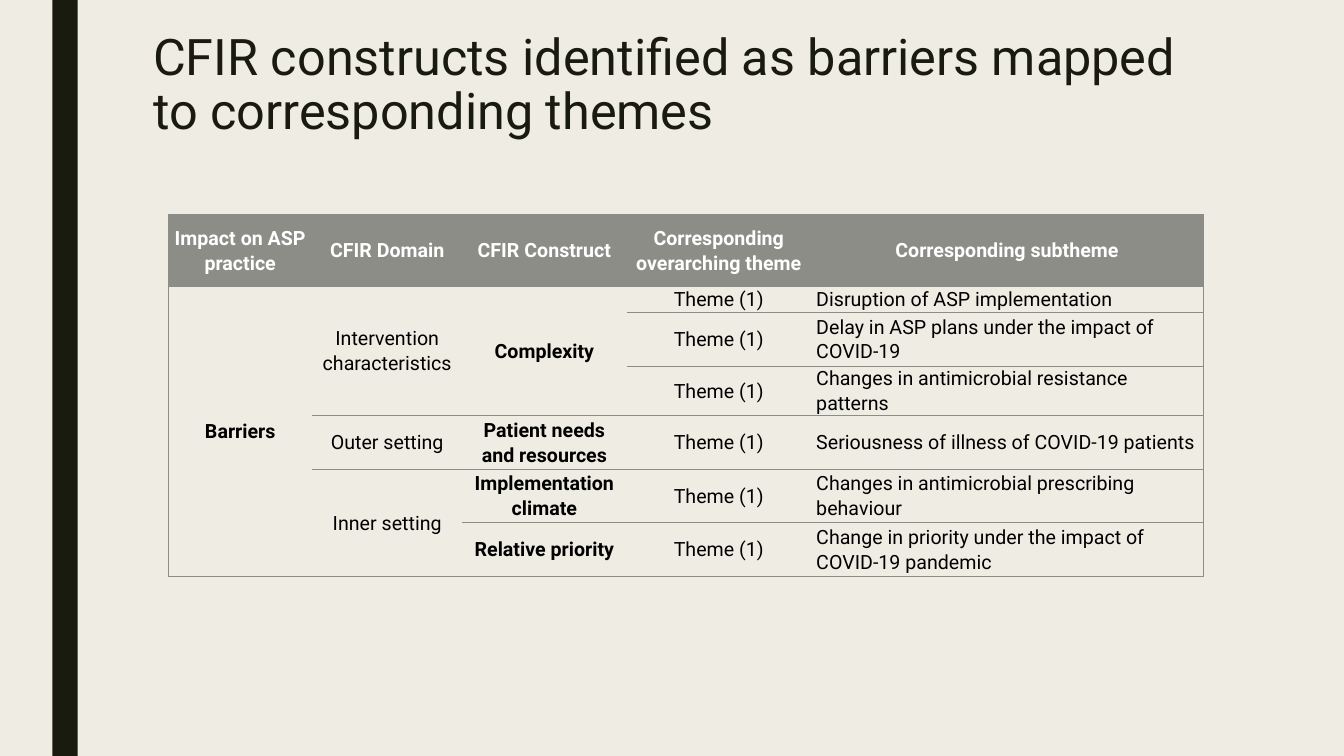
from pptx import Presentation
from pptx.dml.color import RGBColor
from pptx.enum.shapes import MSO_SHAPE as Shape
from pptx.enum.text import MSO_ANCHOR as Anchor, MSO_AUTO_SIZE as AutoSize, PP_ALIGN as Align
from pptx.oxml.ns import qn
from pptx.util import Cm, Pt
from lxml.etree import Element, SubElement

COLOURS = {"paper": "EFEDE3", "ink": "191B0E", "rule": "8C8D86", "white": "FFFFFF", "black": "000000"}
TITLE = "CFIR constructs identified as barriers mapped to corresponding themes"
THEME = "Theme (1)"
HEADINGS = ["Impact on ASP practice", "CFIR Domain", "CFIR Construct",
            "Corresponding overarching theme", "Corresponding subtheme"]
ROWS = [
    ["Barriers", "Intervention characteristics", "Complexity", THEME, "Disruption of ASP implementation"],
    ["", "", "", THEME, "Delay in ASP plans under the impact of COVID-19"],
    ["", "", "", THEME, "Changes in antimicrobial resistance patterns"],
    ["", "Outer setting", "Patient needs and resources", THEME, "Seriousness of illness of COVID-19 patients"],
    ["", "Inner setting", "Implementation climate", THEME, "Changes in antimicrobial prescribing behaviour"],
    ["", "", "Relative priority", THEME, "Change in priority under the impact of COVID-19 pandemic"],
]
MERGES = [((1, 0), (6, 0)), ((1, 1), (3, 1)), ((1, 2), (3, 2)), ((5, 1), (6, 1))]
COLUMN_WIDTHS = [3.63, 3.78, 4.14, 4.65, 9.88]
ROW_HEIGHTS = [1.8, 0.66, 1.35, 0.81, 1.35, 1.35, 1.35]
BOLD_COLUMNS = (0, 2)
CELL_FORMAT = {"vertical_anchor": Anchor.MIDDLE, "margin_left": Cm(0.13), "margin_right": Cm(0.13),
               "margin_top": 0, "margin_bottom": 0}
TITLE_FORMAT = {"vertical_anchor": Anchor.TOP, "word_wrap": True, "auto_size": AutoSize.NONE,
                "margin_left": Cm(0.25), "margin_right": Cm(0.25),
                "margin_top": Cm(0.13), "margin_bottom": Cm(0.13)}


def colour(name):
    return RGBColor.from_string(COLOURS[name])


def apply(target, values):
    for name, value in values.items():
        setattr(target, name, value)


def write(frame, text, size, ink, spacing, bold=False, align=Align.LEFT):
    para = frame.paragraphs[0]
    apply(para, {"alignment": align, "line_spacing": spacing, "space_before": Pt(0), "space_after": Pt(0)})
    span = para.add_run()
    span.text = text
    apply(span.font, {"name": "Roboto", "size": Pt(size), "bold": bold})
    span.font.color.rgb = colour(ink)


def add_side_bar(page):
    bar = page.shapes.add_shape(Shape.RECTANGLE, Cm(1.32), 0, Cm(0.64), Cm(19.05))
    bar.shadow.inherit = False
    bar.fill.solid()
    bar.fill.fore_color.rgb = colour("ink")
    bar.line.fill.background()


def set_title(page):
    title = page.shapes.title
    apply(title, {"left": Cm(3.61), "top": Cm(0.69), "width": Cm(27.33), "height": Cm(4.11)})
    apply(title.text_frame, TITLE_FORMAT)
    write(title.text_frame, TITLE, 36, "ink", 0.89)


def set_borders(cell, sides):
    properties = cell._tc.get_or_add_tcPr()
    for position, side in enumerate("LRTB"):
        line = Element(qn(f"a:ln{side}"), w=str(Pt(0.5)))
        if side in sides:
            fill = SubElement(line, qn("a:solidFill"))
            SubElement(fill, qn("a:srgbClr"), val=COLOURS["rule"])
        else:
            SubElement(line, qn("a:noFill"))
        properties.insert(position, line)


def visible_sides(cell, row, column):
    sides = {"L"} if column == 0 else set()
    if column == len(COLUMN_WIDTHS) - 1:
        sides.add("R")
    if not cell.is_spanned:
        sides.update("TB")
    if row == len(ROWS):
        sides.add("B")
    return sides


def format_cell(cell, text, row, column):
    heading = row == 0
    apply(cell, CELL_FORMAT)
    if heading:
        cell.fill.solid()
        cell.fill.fore_color.rgb = colour("rule")
    else:
        cell.fill.background()
    set_borders(cell, visible_sides(cell, row, column))
    if text:
        subtheme = not heading and column == len(COLUMN_WIDTHS) - 1
        write(cell.text_frame, text, 14, "white" if heading else "black", 1.07,
              heading or column in BOLD_COLUMNS, Align.LEFT if subtheme else Align.CENTER)


def add_barriers_table(page):
    frame = page.shapes.add_table(len(ROW_HEIGHTS), len(COLUMN_WIDTHS), Cm(4.24), Cm(5.41),
                                  Cm(sum(COLUMN_WIDTHS)), Cm(sum(ROW_HEIGHTS)))
    table = frame.table
    apply(table, {"first_row": False, "horz_banding": False})
    for column, width in zip(table.columns, COLUMN_WIDTHS):
        column.width = Cm(width)
    for row, height in zip(table.rows, ROW_HEIGHTS):
        row.height = Cm(height)
    for first, last in MERGES:
        table.cell(*first).merge(table.cell(*last))
    for row, texts in enumerate([HEADINGS] + ROWS):
        for column, text in enumerate(texts):
            format_cell(table.cell(row, column), text, row, column)


def main():
    deck = Presentation()
    apply(deck, {"slide_width": Cm(33.87), "slide_height": Cm(19.05)})
    page = deck.slides.add_slide(deck.slide_layouts[5])
    page.background.fill.solid()
    page.background.fill.fore_color.rgb = colour("paper")
    add_side_bar(page)
    set_title(page)
    add_barriers_table(page)
    deck.save("out.pptx")


if __name__ == "__main__":
    main()
